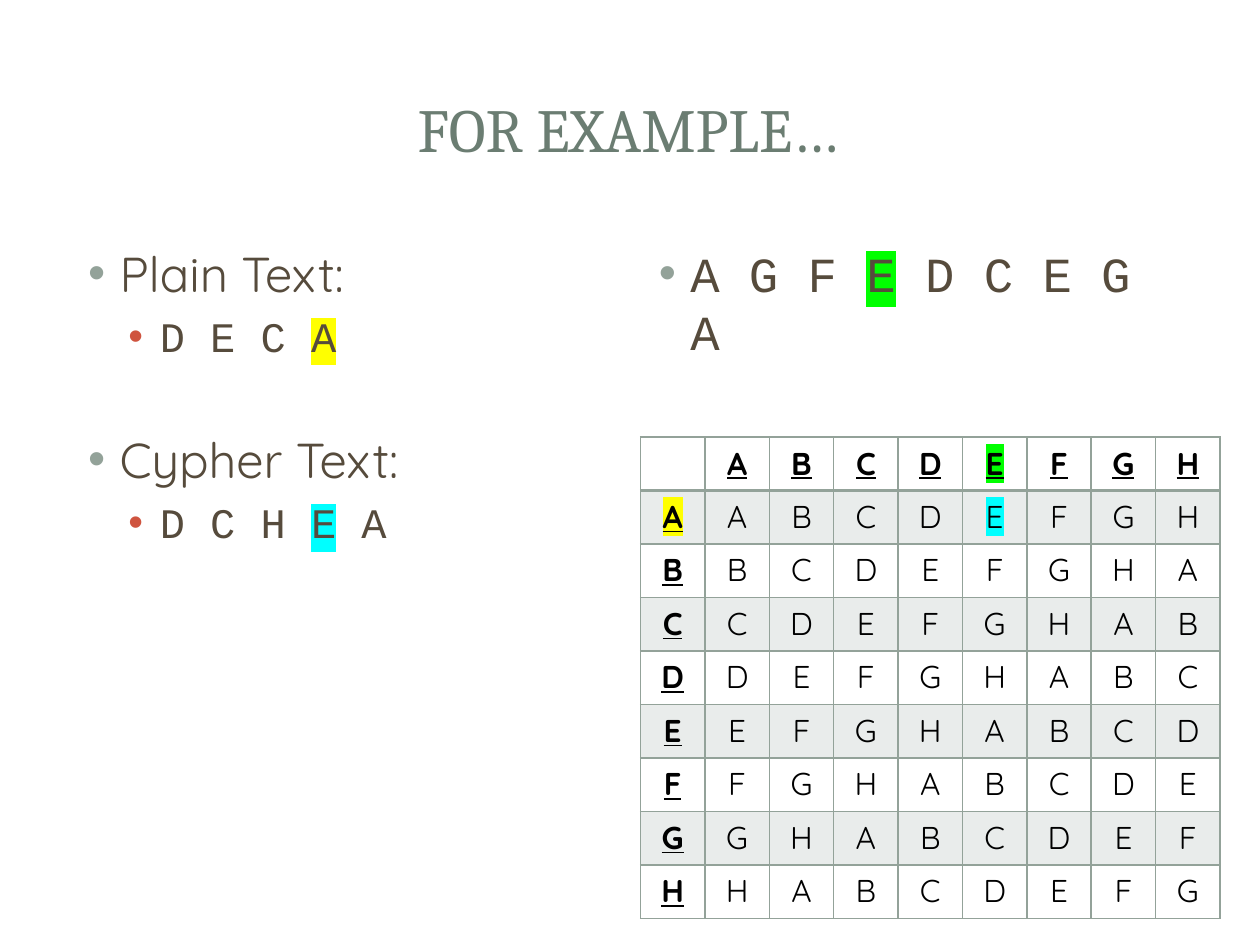
"""Build a slide that explains a letter-table cipher with a worked example."""
from dataclasses import dataclass

from lxml import etree
from pptx import Presentation
from pptx.dml.color import RGBColor
from pptx.enum.shapes import MSO_SHAPE
from pptx.enum.text import MSO_ANCHOR, PP_ALIGN
from pptx.oxml.ns import qn
from pptx.util import Inches, Pt

CENTER = PP_ALIGN.CENTER
MIDDLE, TOP = MSO_ANCHOR.MIDDLE, MSO_ANCHOR.TOP
RECT, ROUNDED = MSO_SHAPE.RECTANGLE, MSO_SHAPE.ROUNDED_RECTANGLE


@dataclass(frozen=True)
class Theme:
    title: str = "6B7D72"
    text: str = "564B3C"
    black: str = "000000"
    white: str = "FFFFFF"
    band: str = "E9ECEB"
    sage: str = "93A299"
    red: str = "CF543F"
    yellow: str = "FFFF00"
    cyan: str = "00FFFF"
    green: str = "00FF00"
    title_pt: int = 35
    body_pt: int = 28
    sub_pt: int = 24
    cell_pt: int = 18
    serif: str = "Cambria"
    sans: str = "Quicksand"
    mono: str = "Courier New"


T = Theme()


def add_runs(p, runs, font, size, color):
    """Fill a paragraph with (text, highlight) runs in one font."""
    p.font.name, p.font.size = font, Pt(size)
    p.font.color.rgb = RGBColor.from_string(color)
    for text, mark in runs:
        r = p.add_run()
        r.text = text
        if mark:
            hl = etree.SubElement(r._r.get_or_add_rPr(), qn("a:highlight"))
            etree.SubElement(hl, qn("a:srgbClr"), val=mark)


def add_bullet(p, color, indent):
    """Give a paragraph a coloured round bullet with a hanging indent."""
    pPr = p._p.get_or_add_pPr()
    pPr.set("marL", str(Inches(indent)))
    pPr.set("indent", str(Inches(-0.25)))
    bu_color = etree.Element(qn("a:buClr"))
    etree.SubElement(bu_color, qn("a:srgbClr"), val=color)
    bu_font = etree.Element(qn("a:buFont"), typeface="Arial")
    bu_char = etree.Element(qn("a:buChar"), char="•")
    defaults = pPr.find(qn("a:defRPr"))
    for el in (bu_color, bu_font, bu_char):
        defaults.addprevious(el)


prs = Presentation()
prs.slide_width, prs.slide_height = Inches(10), Inches(7.5)
s = prs.slides.add_slide(prs.slide_layouts[5])
title = s.shapes.title

panels = [
    (ROUNDED, 0.1, 0.11, 9.8, 7.29, 100),
    (RECT, 0.3, 0.3, 9.4, 1.45, 83),
    (RECT, 0.41, 0.41, 9.17, 1.22, 100),
]
for kind, left, top, width, height, opacity in panels:
    sp = s.shapes.add_shape(kind, Inches(left), Inches(top), Inches(width), Inches(height))
    sp.shadow.inherit = False
    sp.line.fill.background()
    sp.fill.solid()
    sp.fill.fore_color.rgb = RGBColor.from_string(T.white)
    if kind == ROUNDED:
        sp.adjustments[0] = 0.02
    if opacity < 100:
        tint = sp._element.spPr.find(qn("a:solidFill"))[0]
        etree.SubElement(tint, qn("a:alpha"), val=str(opacity * 1000))
    title._element.addprevious(sp._element)

title.left, title.top = Inches(0.47), Inches(0.45)
title.width, title.height = Inches(9.03), Inches(1.13)
title.text_frame.vertical_anchor = MIDDLE
p = title.text_frame.paragraphs[0]
p.alignment = CENTER
add_runs(p, [("FOR EXAMPLE…", None)], T.serif, T.title_pt, T.title)

heading = (T.sans, T.body_pt, T.sage, 0.38)
message = (T.mono, T.sub_pt, T.red, 0.7)
key = (T.mono, T.body_pt, T.sage, 0.38)
columns = [
    (0.47, 4.82, [
        (heading, 5, [("Plain Text:", None)]),
        (message, 5, [("D E C ", None), ("A", T.yellow)]),
        (heading, 39, [("Cypher Text:", None)]),
        (message, 5, [("D C H ", None), ("E", T.cyan), (" A", None)]),
    ]),
    (5, 1.76, [
        (key, 5, [("A G F ", None), ("E", T.green), (" D C E G A", None)]),
    ]),
]
for left, height, lines in columns:
    box = s.shapes.add_textbox(Inches(left), Inches(1.88), Inches(4.42), Inches(height))
    tf = box.text_frame
    tf.word_wrap, tf.vertical_anchor = True, TOP
    for i, ((font, size, dot, indent), gap, runs) in enumerate(lines):
        p = tf.add_paragraph() if i else tf.paragraphs[0]
        p.space_before = Pt(gap)
        add_runs(p, runs, font, size, T.text)
        add_bullet(p, dot, indent)

LETTERS = "ABCDEFGH"
n = len(LETTERS) + 1
marks = {(0, 5): T.green, (1, 0): T.yellow, (1, 5): T.cyan}
frame = s.shapes.add_table(n, n, Inches(61 / 12), Inches(3.47), Inches(4.6), Inches(3.82))
table = frame.table
table.first_row = table.horz_banding = False
for row in range(n):
    for col in range(n):
        cell = table.cell(row, col)
        cell.fill.solid()
        cell.fill.fore_color.rgb = RGBColor.from_string(T.band if row % 2 else T.white)
        is_header = row == 0 or col == 0
        shift = row + col - (1 if is_header else 2)
        p = cell.text_frame.paragraphs[0]
        p.alignment = CENTER
        if row or col:
            letter = LETTERS[shift % len(LETTERS)]
            add_runs(p, [(letter, marks.get((row, col)))], T.sans, T.cell_pt, T.black)
            p.font.bold = p.font.underline = is_header
        tcPr = cell._tc.get_or_add_tcPr()
        for i, side in enumerate(("lnL", "lnR", "lnT", "lnB")):
            thick = (side, row) in (("lnB", 0), ("lnT", 1))
            ln = etree.Element(qn(f"a:{side}"), w=str(Pt(2 if thick else 1)))
            fill = etree.SubElement(ln, qn("a:solidFill"))
            etree.SubElement(fill, qn("a:srgbClr"), val=T.sage)
            tcPr.insert(i, ln)

prs.save("out.pptx")
